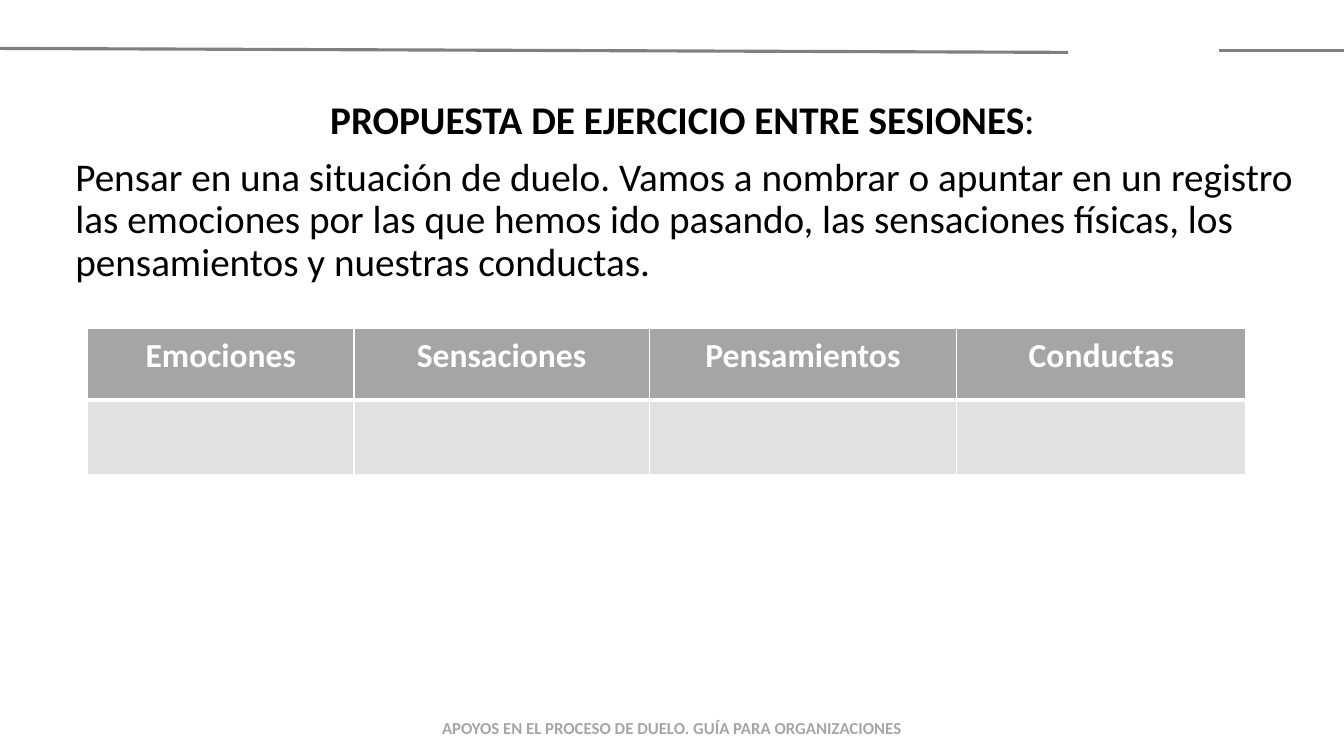
import pptx
import pptx.util
import pptx.dml.color
import pptx.enum.shapes
import pptx.enum.text
import pptx.oxml
import pptx.oxml.ns

Cm = pptx.util.Cm
Pt = pptx.util.Pt
ALIGN = pptx.enum.text.PP_ALIGN


def color(code):
    """Turn a hex string into a colour."""
    return pptx.dml.color.RGBColor.from_string(code)


def write(frame, text, size=28, ink="000000", bold=False, align=ALIGN.LEFT, lead=None, tail=""):
    """Fill a text frame with one paragraph, ending in an optional plain tail."""
    frame.word_wrap = True
    frame.auto_size = pptx.enum.text.MSO_AUTO_SIZE.NONE
    frame.vertical_anchor = pptx.enum.text.MSO_ANCHOR.TOP
    para = frame.paragraphs[0]
    para.alignment = align
    para.line_spacing = lead
    para.space_before = Pt(0)
    for part, heavy in ((text, bold), (tail, False)):
        if part:
            run = para.add_run()
            run.text = part
            run.font.name = "Calibri"
            run.font.size = Pt(size)
            run.font.bold = heavy
            run.font.color.rgb = color(ink)


class Page:
    """Hold the style and the current slide."""

    rule = "808080"
    note = "A6A6A6"
    head = "A5A5A5"
    pale = "E1E1E1"
    white = "FFFFFF"

    def __init__(self, deck):
        """Add a title-only slide to the deck."""
        self.slide = deck.slides.add_slide(deck.slide_layouts[5])

    def line(self, x1, y1, x2, y2):
        """Draw a plain grey rule."""
        kind = pptx.enum.shapes.MSO_CONNECTOR.STRAIGHT
        rule = self.slide.shapes.add_connector(kind, Cm(x1), Cm(y1), Cm(x2), Cm(y2))
        rule.line.color.rgb = color(self.rule)
        rule.line.width = Pt(2.25)
        props = rule._element.spPr
        props.append(props.makeelement(pptx.oxml.ns.qn("a:effectLst"), {}))

    def title(self, text, x, y, w, h, **style):
        """Place and fill the title placeholder."""
        box = self.slide.shapes.title
        box.left, box.top, box.width, box.height = Cm(x), Cm(y), Cm(w), Cm(h)
        write(box.text_frame, text, **style)

    def text(self, text, x, y, w, h, **style):
        """Add a text box."""
        box = self.slide.shapes.add_textbox(Cm(x), Cm(y), Cm(w), Cm(h))
        write(box.text_frame, text, **style)

    def edge(self, cell, **widths):
        """Draw white cell borders, with widths in points by side."""
        props = cell._tc.get_or_add_tcPr()
        for spot, side in enumerate("LRTB"):
            props.insert(spot, pptx.oxml.parse_xml(
                f'<a:ln{side} {pptx.oxml.ns.nsdecls("a")} w="{Pt(widths.get(side, 1))}">'
                f'<a:solidFill><a:srgbClr val="{self.white}"/></a:solidFill></a:ln{side}>'))

    def table(self, heads, x, y, cols, rows):
        """Add a table with a header row and empty rows below."""
        frame = self.slide.shapes.add_table(
            len(rows), len(cols), Cm(x), Cm(y), Cm(sum(cols)), Cm(sum(rows)))
        grid = frame.table
        grid.horz_banding = False
        for col, width in zip(grid.columns, cols):
            col.width = Cm(width)
        for i, height in enumerate(rows):
            grid.rows[i].height = Cm(height)
            for j, name in enumerate(heads):
                cell = grid.cell(i, j)
                cell.margin_left = cell.margin_right = Cm(0.25)
                cell.margin_top = cell.margin_bottom = Cm(0.18)
                cell.fill.solid()
                cell.fill.fore_color.rgb = color(self.pale if i else self.head)
                self.edge(cell, **({"T": 3} if i else {"B": 3}))
                if i == 0:
                    write(cell.text_frame, name, size=24, ink=self.white,
                          bold=True, align=ALIGN.CENTER)


def main():
    """Build and save the slide."""
    deck = pptx.Presentation()
    deck.slide_width, deck.slide_height = Cm(33.87), Cm(19.05)
    page = Page(deck)
    page.line(0, 1.22, 26.92, 1.32)
    page.line(30.73, 1.27, 33.87, 1.27)
    page.text("APOYOS EN EL PROCESO DE DUELO. GUÍA PARA ORGANIZACIONES",
              0, 17.96, 33.87, 0.76, size=12, ink=page.note, bold=True, align=ALIGN.CENTER)
    page.title("PROPUESTA DE EJERCICIO ENTRE SESIONES", 1.65, 2.41, 31.32, 1.35,
               bold=True, align=ALIGN.CENTER, lead=0.9, tail=": ")
    page.text("Pensar en una situación de duelo. Vamos a nombrar o apuntar en un registro "
              "las emociones por las que hemos ido pasando, las sensaciones físicas, los "
              "pensamientos y nuestras conductas.",
              1.65, 3.85, 31.32, 3.6, lead=0.9)
    page.table(["Emociones", "Sensaciones", "Pensamientos", "Conductas"],
               2.21, 8.28, [6.71, 7.44, 7.75, 7.29], [1.8, 1.88])
    deck.save("out.pptx")


if __name__ == "__main__":
    main()
